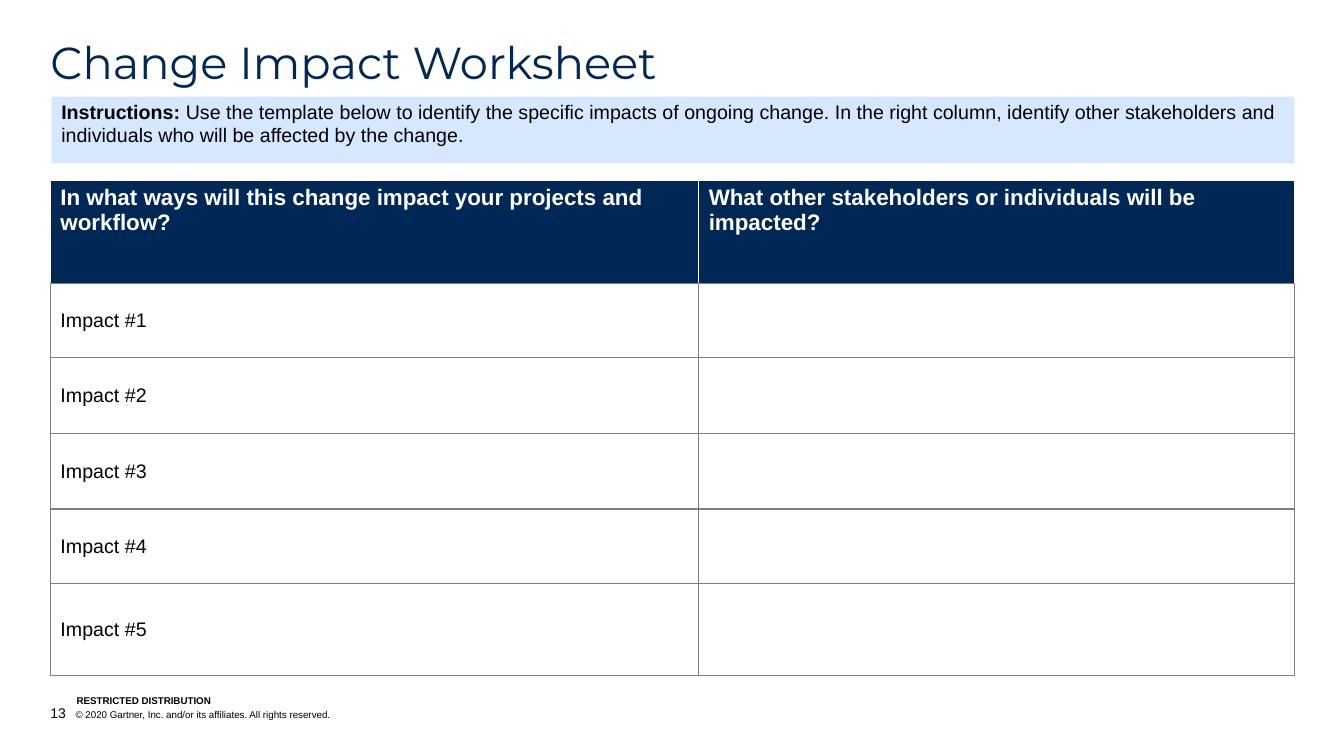
from lxml.etree import SubElement
from pptx import Presentation
from pptx.dml.color import RGBColor
from pptx.enum.shapes import MSO_SHAPE
from pptx.enum.text import MSO_ANCHOR as Anchor, PP_ALIGN as Align
from pptx.oxml.ns import qn
from pptx.util import Inches, Pt

NAVY = RGBColor(0x00, 0x28, 0x56)
PALE_BLUE = RGBColor(0xD5, 0xE8, 0xFF)
GREY = RGBColor(0x80, 0x80, 0x80)
WHITE = RGBColor(0xFF, 0xFF, 0xFF)
BLACK = RGBColor(0x00, 0x00, 0x00)

QUESTIONS = (
    "In what ways will this change impact your projects and workflow?",
    "What other stakeholders or individuals will be impacted?",
)
COLUMN_WIDTHS = (6.43, 5.91)
ROW_HEIGHTS = (1.02, 0.74, 0.75, 0.75, 0.74, 0.91)


def set_font(font, size, color=BLACK, name="Arial", bold=False):
    """Set the face, size, colour and weight of a font."""
    font.name, font.size, font.bold = name, Pt(size), bold
    font.color.rgb = color


def set_frame(frame, anchor=Anchor.TOP, left=0, top=0):
    """Wrap a text frame, anchor it and set its insets."""
    frame.word_wrap = True
    frame.vertical_anchor = anchor
    frame.margin_left, frame.margin_top = Inches(left), Inches(top)
    frame.margin_right = frame.margin_bottom = 0


def add_text(slide, box, anchor=Anchor.TOP):
    """Add a text box without insets and return its first paragraph."""
    frame = slide.shapes.add_textbox(*map(Inches, box)).text_frame
    set_frame(frame, anchor)
    return frame.paragraphs[0]


def add_title(slide, box):
    """Place the slide title."""
    title = add_text(slide, box)
    title.text = "Change Impact Worksheet"
    title.line_spacing = 0.9
    set_font(title.font, 32, NAVY, "Montserrat")


def add_instructions(slide, box):
    """Place the shaded band of instructions."""
    band = slide.shapes.add_shape(MSO_SHAPE.RECTANGLE, *map(Inches, box))
    band.shadow.inherit = False
    band.fill.solid()
    band.fill.fore_color.rgb = PALE_BLUE
    band.line.fill.background()
    set_frame(band.text_frame, left=0.1, top=0.03)
    instructions = band.text_frame.paragraphs[0]
    instructions.alignment = Align.LEFT
    for wording, bold in (
        ("Instructions: ", True),
        ("Use the template below to identify the specific impacts of ongoing "
         "change. In the right column, identify other stakeholders and "
         "individuals who will be affected by the change.", False),
    ):
        run = instructions.add_run()
        run.text = wording
        set_font(run.font, 14, bold=bold)


def add_borders(cell, sides):
    """Draw grey one-point lines on the given sides of a cell."""
    properties = cell._tc.get_or_add_tcPr()
    for position, side in enumerate(sides):
        line = properties.makeelement(qn(f"a:ln{side}"), {"w": str(Pt(1))})
        fill = SubElement(line, qn("a:solidFill"))
        SubElement(fill, qn("a:srgbClr"), val=str(GREY))
        properties.insert(position, line)


def add_worksheet(slide, box):
    """Place the table of impacts and affected stakeholders."""
    worksheet = slide.shapes.add_table(
        len(ROW_HEIGHTS), len(COLUMN_WIDTHS), *map(Inches, box)).table
    worksheet.first_row = worksheet.horz_banding = False
    for column, width in zip(worksheet.columns, COLUMN_WIDTHS):
        column.width = Inches(width)
    for number, (row, height) in enumerate(zip(worksheet.rows, ROW_HEIGHTS)):
        row.height = Inches(height)
        entries = (f"Impact #{number}", "") if number else QUESTIONS
        for cell, entry in zip(row.cells, entries):
            cell.text = entry
            font = cell.text_frame.paragraphs[0].font
            if number:
                cell.vertical_anchor = Anchor.MIDDLE
                cell.fill.background()
                set_font(font, 14)
                add_borders(cell, "LRTB")
            else:
                cell.fill.solid()
                cell.fill.fore_color.rgb = NAVY
                set_font(font, 16, WHITE, bold=True)
                add_borders(cell, "B")


def add_footer(slide, box):
    """Place the distribution note above the page number and copyright line."""
    left, top, width, height = box
    distribution = add_text(slide, (left + 0.26, top, 2.53, 0.12), Anchor.BOTTOM)
    distribution.text = "RESTRICTED DISTRIBUTION"
    set_font(distribution.font, 7, bold=True)

    copyright_line = add_text(
        slide, (left, top + 0.1, width, height - 0.1), Anchor.BOTTOM)
    indent = Inches(0.25)
    properties = copyright_line._p.get_or_add_pPr()
    properties.set("marL", str(indent))
    properties.set("indent", str(-indent))
    tabs = SubElement(properties, qn("a:tabLst"))
    SubElement(tabs, qn("a:tab"), pos=str(indent), algn="l")
    for wording, size in (
        ("13", 10),
        ("\t© 2020 Gartner, Inc. and/or its affiliates. All rights reserved.", 7),
    ):
        run = copyright_line.add_run()
        run.text = wording
        set_font(run.font, size)


def main():
    """Build the worksheet slide and save it."""
    deck = Presentation()
    deck.slide_width, deck.slide_height = Inches(13.33), Inches(7.5)
    slide = deck.slides.add_slide(deck.slide_layouts[6])
    add_title(slide, (0.5, 0.4, 12.33, 0.48))
    add_instructions(slide, (0.51, 0.96, 12.33, 0.66))
    add_worksheet(slide, (0.5, 1.79, sum(COLUMN_WIDTHS), sum(ROW_HEIGHTS)))
    add_footer(slide, (0.5, 6.89, 7.99, 0.27))
    deck.save("out.pptx")


if __name__ == "__main__":
    main()
